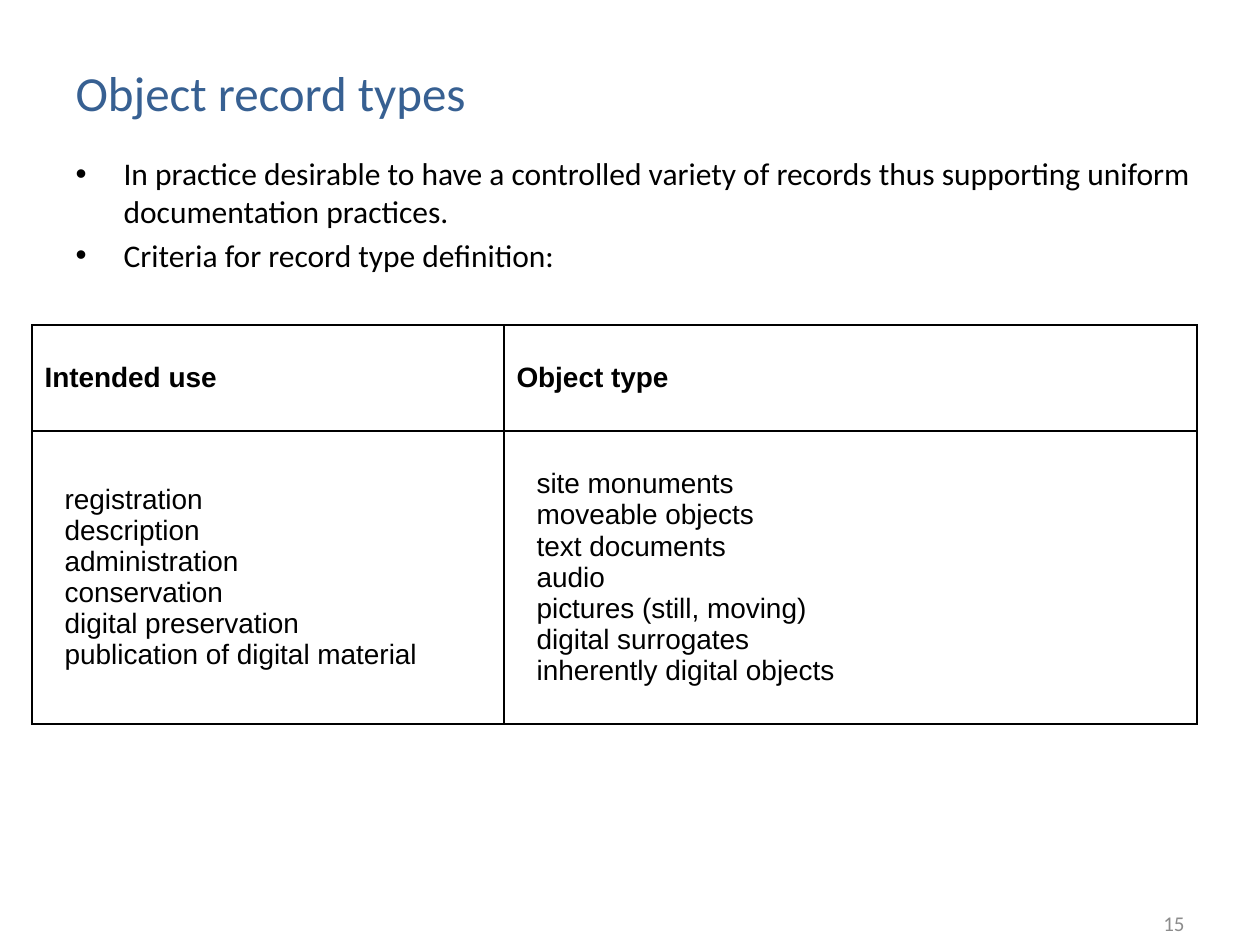
import pptx
import pptx.util
import pptx.dml.color
import pptx.enum.text
import pptx.oxml
import pptx.oxml.ns

EMU_PER_PX = 914400 / 126
ALIGN = pptx.enum.text.PP_ALIGN
ANCHOR = pptx.enum.text.MSO_ANCHOR
THEME = {
    "title": {"name": "Calibri", "size": 28, "color": "376092", "bold": False},
    "body": {"name": "Calibri", "size": 18, "color": "000000", "bold": False},
    "head": {"name": "Arial", "size": 16, "color": "000000", "bold": True},
    "cell": {"name": "Arial", "size": 16, "color": "000000", "bold": False},
    "number": {"name": "Calibri", "size": 12, "color": "8C8C8C", "bold": False},
    "border": "000000",
}


def px(value):
    return pptx.util.Emu(round(value * EMU_PER_PX))


def write(tf, lines, style, align, indent=(0, 0), gap=0):
    fmt = THEME[style]
    tf.word_wrap = True
    for i, line in enumerate(lines):
        p = tf.paragraphs[0] if i == 0 else tf.add_paragraph()
        p.alignment = align
        p.space_before = pptx.util.Pt(gap if i else 0)
        pPr = p._p.get_or_add_pPr()
        for key, value in zip(("marL", "indent"), indent):
            pPr.set(key, str(px(value)))
        r = p.add_run()
        r.text = line
        font = {"name": fmt["name"], "size": pptx.util.Pt(fmt["size"]), "bold": fmt["bold"]}
        for key, value in font.items():
            setattr(r.font, key, value)
        r.font.color.rgb = pptx.dml.color.RGBColor.from_string(fmt["color"])


prs = pptx.Presentation()
prs.slide_width, prs.slide_height = px(1260), px(945)
s = prs.slides.add_slide(prs.slide_layouts[1])
title, body = s.placeholders
number = s.shapes.add_textbox(0, 0, 0, 0)

for sp, box, anchor in (
    (title, (63, 53, 1134, 78), ANCHOR.MIDDLE),
    (body, (63, 148, 1166, 157), ANCHOR.TOP),
    (number, (1113, 902, 84, 43), ANCHOR.MIDDLE),
):
    for key, value in zip(("left", "top", "width", "height"), box):
        setattr(sp, key, px(value))
    sp.text_frame.vertical_anchor = anchor
    sp.text_frame.auto_size = pptx.enum.text.MSO_AUTO_SIZE.NONE

write(title.text_frame, ["Object record types"], "title", ALIGN.LEFT)
write(body.text_frame, [
    "In practice desirable to have a controlled variety of records thus supporting uniform documentation practices.",
    "Criteria for record type definition:",
], "body", ALIGN.LEFT, (48, -48), 3.6)
write(number.text_frame, ["15"], "number", ALIGN.RIGHT)

columns = (
    (472, ALIGN.LEFT, "Intended use", [
        "registration", "description", "administration", "conservation",
        "digital preservation", "publication of digital material",
    ]),
    (693, ALIGN.JUSTIFY, "Object type", [
        "site monuments", "moveable objects", "text documents", "audio",
        "pictures (still, moving)", "digital surrogates", "inherently digital objects",
    ]),
)
table = s.shapes.add_table(2, 2, px(32), px(325), px(1165), px(399)).table
table.first_row = table.horz_banding = False
for row, height in zip(table.rows, (106, 293)):
    row.height = px(height)
for c, (width, align, heading, items) in enumerate(columns):
    table.columns[c].width = px(width)
    write(table.cell(0, c).text_frame, [heading], "head", ALIGN.JUSTIFY, (48, -48))
    write(table.cell(1, c).text_frame, items, "cell", align, (48, -28))

for cell in table.iter_cells():
    cell.vertical_anchor = ANCHOR.MIDDLE
    tcPr = cell._tc.get_or_add_tcPr()
    for side in ("lnL", "lnR", "lnT", "lnB"):
        tcPr.append(pptx.oxml.parse_xml(
            f'<a:{side} {pptx.oxml.ns.nsdecls("a")} w="{pptx.util.Pt(1)}"><a:solidFill>'
            f'<a:srgbClr val="{THEME["border"]}"/></a:solidFill></a:{side}>'
        ))
    cell.fill.background()

prs.save("out.pptx")
